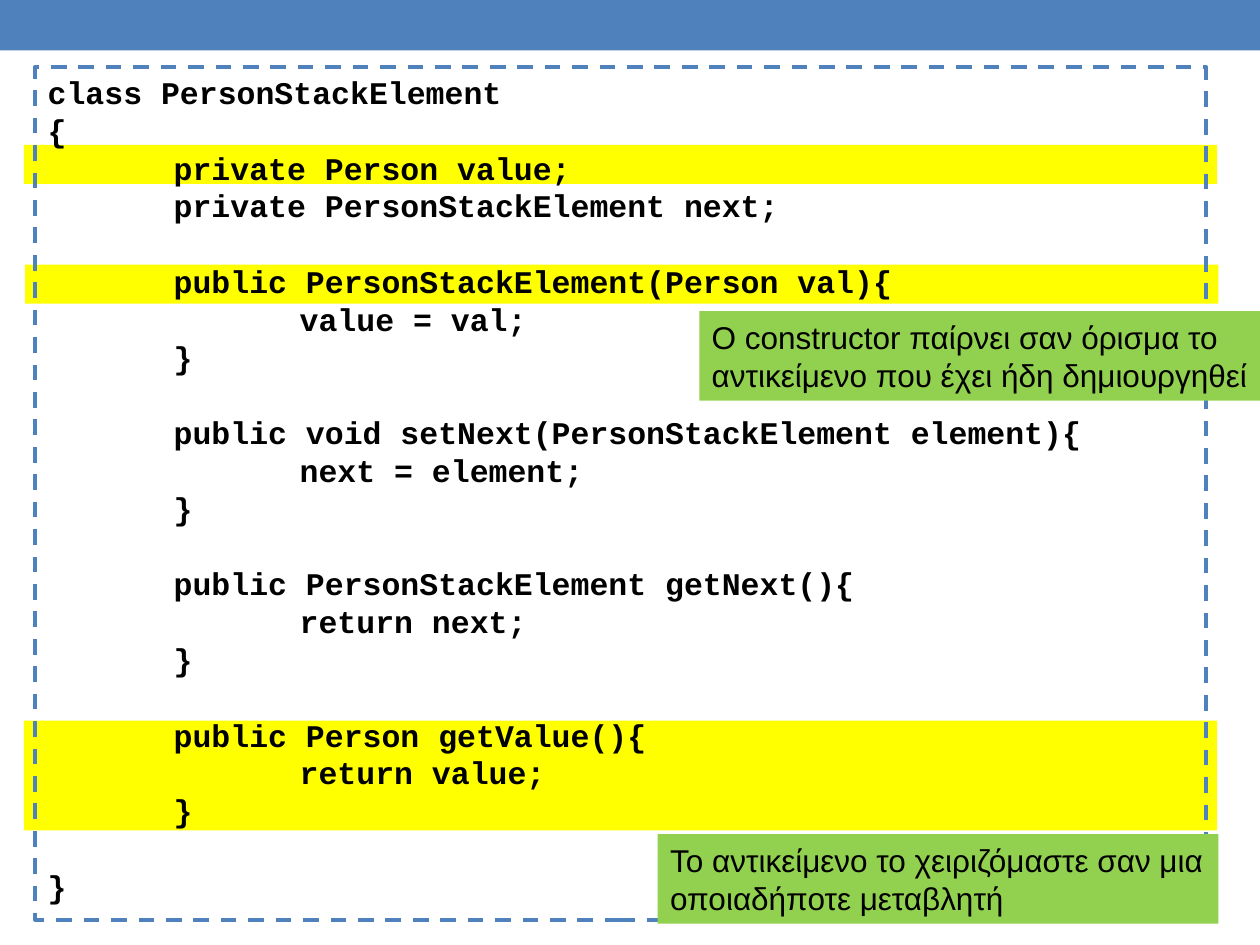
from dataclasses import dataclass

from pptx import Presentation
from pptx.dml.color import RGBColor
from pptx.enum.dml import MSO_LINE
from pptx.enum.shapes import MSO_SHAPE
from pptx.enum.text import MSO_ANCHOR, PP_ALIGN
from pptx.util import Inches, Pt

RECT = MSO_SHAPE.RECTANGLE
DASH = MSO_LINE.DASH
MIDDLE = MSO_ANCHOR.MIDDLE
TOP = MSO_ANCHOR.TOP
LEFT = PP_ALIGN.LEFT


@dataclass(frozen=True)
class Theme:
    blue: RGBColor = RGBColor(0x4F, 0x81, 0xBD)
    yellow: RGBColor = RGBColor(0xFF, 0xFF, 0x00)
    green: RGBColor = RGBColor(0x92, 0xD0, 0x50)
    black: RGBColor = RGBColor(0, 0, 0)
    size: Pt = Pt(18)
    pitch: Pt = Pt(21.6)
    border: Pt = Pt(2.25)
    sans: str = "Arial"
    mono: str = "Courier New"


THEME = Theme()

CODE = [
    """class PersonStackElement
{
\tprivate Person value;
\tprivate PersonStackElement next;""",
    """\tpublic PersonStackElement(Person val){
\t\tvalue = val;
\t}""",
    """\tpublic void setNext(PersonStackElement element){
\t\tnext = element;
\t}""",
    """\tpublic PersonStackElement getNext(){
\t\treturn next;
\t}""",
    """\tpublic Person getValue(){
\t\treturn value;
\t}""",
    "}",
]

BANDS = [
    (0.2, 2.1, 9.47, 0.31),
    (0.19, 5.72, 9.47, 0.87),
    (0.19, 1.15, 9.47, 0.31),
]

NOTES = [
    ((5.55, 2.47, 4.45, 0.71),
     "O constructor παίρνει σαν όρισμα το αντικείμενο που έχει ήδη δημιουργηθεί"),
    ((5.22, 6.62, 4.45, 0.71),
     "Το αντικείμενο το χειριζόμαστε σαν μια οποιαδήποτε μεταβλητή"),
]


def add_rect(slide, box, fill=None):
    shape = slide.shapes.add_shape(RECT, *map(Inches, box))
    shape.shadow.inherit = False
    shape.line.fill.background()
    if fill is None:
        shape.fill.background()
    else:
        shape.fill.solid()
        shape.fill.fore_color.rgb = fill
    return shape


def set_attrs(target, values):
    for name, value in values.items():
        setattr(target, name, value)


def write_line(para, text, font, bold=False, gap=0):
    set_attrs(para, {
        "alignment": LEFT,
        "line_spacing": THEME.pitch,
        "space_before": gap,
    })
    props = para._p.get_or_add_pPr()
    props.set("marL", str(Inches(text.count("\t"))))
    props.set("indent", "0")
    run = para.add_run()
    run.text = text.lstrip("\t")
    set_attrs(run.font, {"name": font, "size": THEME.size, "bold": bold})
    run.font.color.rgb = THEME.black


def add_code(slide, box, blocks):
    shape = add_rect(slide, box)
    shape.line.color.rgb = THEME.blue
    set_attrs(shape.line, {"width": THEME.border, "dash_style": DASH})
    frame = shape.text_frame
    set_attrs(frame, {"word_wrap": True, "vertical_anchor": TOP})
    para = frame.paragraphs[0]
    for i, block in enumerate(blocks):
        for j, text in enumerate(block.split("\n")):
            if i or j:
                para = frame.add_paragraph()
            gap = THEME.pitch if i and not j else 0
            write_line(para, text, THEME.mono, True, gap)


def add_note(slide, box, text):
    frame = add_rect(slide, box, THEME.green).text_frame
    set_attrs(frame, {
        "word_wrap": True,
        "vertical_anchor": MIDDLE,
        "margin_right": Inches(0.05),
    })
    write_line(frame.paragraphs[0], text, THEME.sans)


def main():
    deck = Presentation()
    deck.slide_width, deck.slide_height = Inches(10), Inches(7.5)
    slide = deck.slides.add_slide(deck.slide_layouts[6])
    add_rect(slide, (0, 0, 10, 0.4), THEME.blue)
    for box in BANDS:
        add_rect(slide, box, THEME.yellow)
    add_code(slide, (0.28, 0.53, 9.29, 6.77), CODE)
    for box, text in NOTES:
        add_note(slide, box, text)
    deck.save("out.pptx")


if __name__ == "__main__":
    main()
